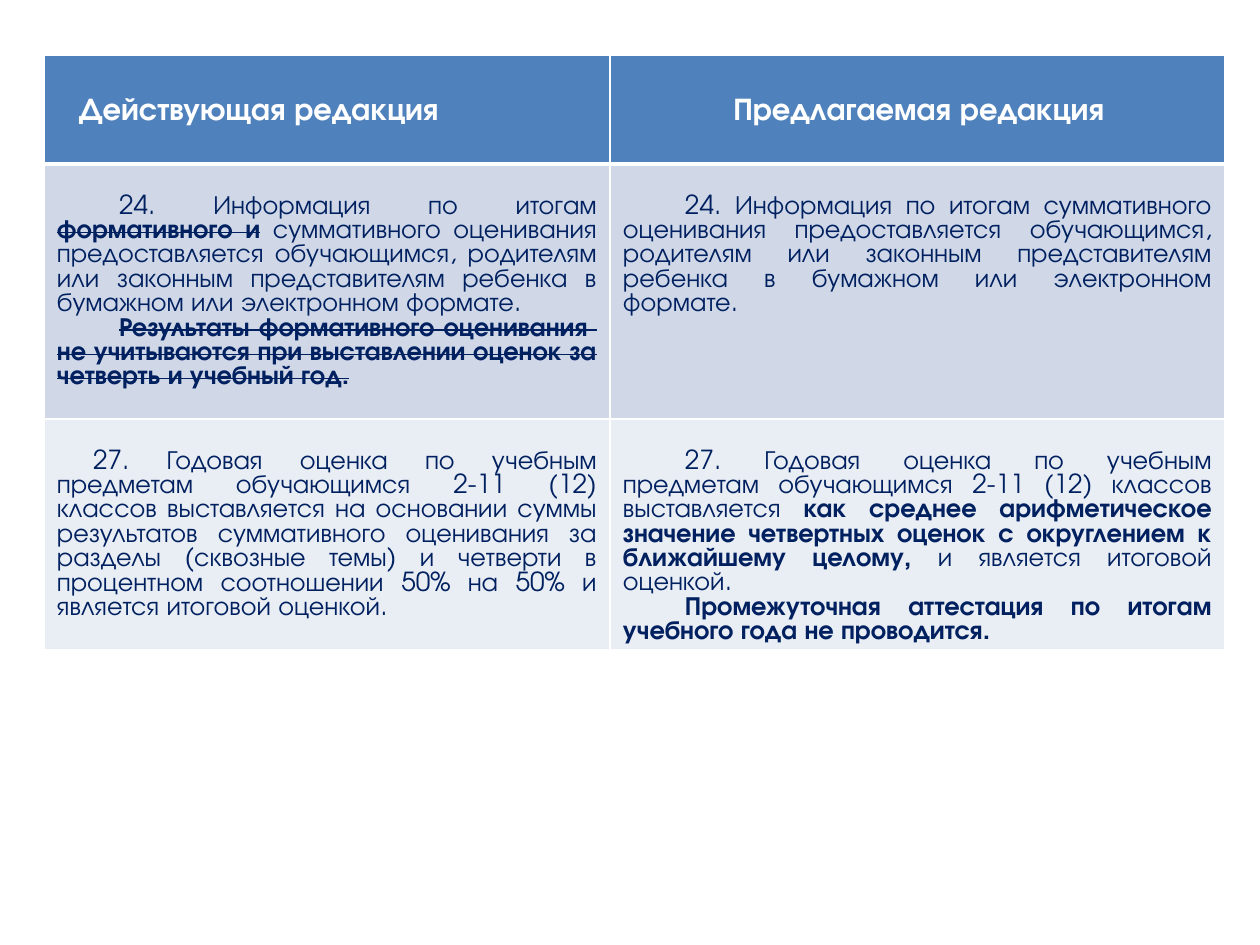
from dataclasses import dataclass

from lxml.etree import SubElement
from pptx import Presentation
from pptx.dml.color import RGBColor
from pptx.enum.text import MSO_ANCHOR, PP_ALIGN
from pptx.oxml.ns import qn
from pptx.util import Emu, Pt

PX = 914400 // 126


@dataclass(frozen=True)
class Theme:
    font: str = "TeX Gyre Adventor"
    header_size: int = 18
    body_size: int = 15
    header_text: str = "FFFFFF"
    body_text: str = "002060"
    border: str = "FFFFFF"
    header_fill: str = "4F81BD"
    row_fills: tuple = ("D0D8E8", "E9EDF4")


THEME = Theme()
PLAIN, BOLD, STRUCK = "plain", "bold", "struck"
COLUMN_WIDTHS = (566, 615)
ROW_HEIGHTS = (109, 255, 231)

# Header: text, alignment, left margin, first-line indent
HEADERS = (
    ("Действующая редакция", PP_ALIGN.JUSTIFY, 1, 25),
    ("Предлагаемая редакция", PP_ALIGN.CENTER, 3, 0),
)

# Body: each cell is a first-line indent and paragraphs of (text, style) pieces
CLAUSES = (
    (
        (62, (
            (("24. Информация по итогам ", PLAIN),
             ("формативного и", STRUCK),
             (" суммативного оценивания предоставляется обучающимся, родителям "
              "или законным представителям ребенка в бумажном или электронном "
              "формате.", PLAIN)),
            (("Результаты формативного оценивания  не учитываются при "
              "выставлении оценок за четверть и учебный год.", STRUCK),),
        )),
        (62, (
            (("24. Информация по итогам суммативного оценивания предоставляется "
              "обучающимся, родителям или законным представителям ребенка в "
              "бумажном или электронном формате.", PLAIN),),
        )),
    ),
    (
        (36, (
            (("27. Годовая оценка по учебным предметам обучающимся 2-11 (12) "
              "классов выставляется на основании суммы результатов суммативного "
              "оценивания за разделы (сквозные темы) и четверти в процентном "
              "соотношении 50% на 50% и является итоговой оценкой.", PLAIN),),
        )),
        (62, (
            (("27. Годовая оценка по учебным предметам обучающимся 2-11 (12) "
              "классов выставляется ", PLAIN),
             ("как среднее арифметическое значение четвертных оценок с "
              "округлением к ближайшему целому,", BOLD),
             (" и является итоговой оценкой.", PLAIN)),
            (("Промежуточная аттестация по итогам учебного года не "
              "проводится.", BOLD),),
        )),
    ),
)


def px(length):
    return Emu(length * PX)


def style_cell(cell, fill, margins, bottom_width=1):
    """Set borders, fill and margins (sides, top, bottom)."""
    properties = cell._tc.get_or_add_tcPr()
    for side, width in (("L", 1), ("R", 1), ("T", 1), ("B", bottom_width)):
        line = SubElement(properties, qn(f"a:ln{side}"), w=str(Pt(width)))
        solid = SubElement(line, qn("a:solidFill"))
        SubElement(solid, qn("a:srgbClr"), val=THEME.border)
    cell.fill.solid()
    cell.fill.fore_color.rgb = RGBColor.from_string(fill)
    sides, top, bottom = margins
    cell.margin_left = cell.margin_right = px(sides)
    cell.margin_top, cell.margin_bottom = px(top), px(bottom)


def format_paragraph(paragraph, alignment, margin, indent):
    paragraph.alignment = alignment
    properties = paragraph._p.get_or_add_pPr()
    properties.set("marL", str(px(margin)))
    properties.set("indent", str(px(indent)))


def add_piece(paragraph, text, style, size, color):
    run = paragraph.add_run()
    run.text = text
    run.font.name = THEME.font
    run.font.size = Pt(size)
    run.font.bold = style != PLAIN
    run.font.color.rgb = RGBColor.from_string(color)
    if style == STRUCK:
        run._r.get_or_add_rPr().set("strike", "sngStrike")


def fill_header(cell, text, alignment, margin, indent):
    style_cell(cell, THEME.header_fill, (9, 0, 0), bottom_width=3)
    cell.vertical_anchor = MSO_ANCHOR.MIDDLE
    title = cell.text_frame.paragraphs[0]
    format_paragraph(title, alignment, margin, indent)
    title.line_spacing = 1.15
    add_piece(title, text, BOLD, THEME.header_size, THEME.header_text)


def fill_clause(cell, fill, indent, paragraphs):
    # The top margin leaves one line free above the clause
    style_cell(cell, fill, (13, 31, 6))
    frame = cell.text_frame
    for number, pieces in enumerate(paragraphs):
        paragraph = frame.add_paragraph() if number else frame.paragraphs[0]
        format_paragraph(paragraph, PP_ALIGN.JUSTIFY, 0, indent)
        for text, style in pieces:
            add_piece(paragraph, text, style, THEME.body_size, THEME.body_text)


def add_comparison(slide):
    table = slide.shapes.add_table(
        len(ROW_HEIGHTS), len(COLUMN_WIDTHS), px(44), px(55),
        px(sum(COLUMN_WIDTHS)), px(sum(ROW_HEIGHTS))).table
    for column, width in zip(table.columns, COLUMN_WIDTHS):
        column.width = px(width)
    for row, height in zip(table.rows, ROW_HEIGHTS):
        row.height = px(height)

    # Header row
    for cell, header in zip(table.rows[0].cells, HEADERS):
        fill_header(cell, *header)

    # Clauses, current wording beside proposed wording
    for number, (clause, fill) in enumerate(zip(CLAUSES, THEME.row_fills), 1):
        for cell, (indent, paragraphs) in zip(table.rows[number].cells, clause):
            fill_clause(cell, fill, indent, paragraphs)


def main():
    presentation = Presentation()
    presentation.slide_width, presentation.slide_height = px(1260), px(945)
    slide = presentation.slides.add_slide(presentation.slide_layouts[6])
    add_comparison(slide)
    presentation.save("out.pptx")


if __name__ == "__main__":
    main()
